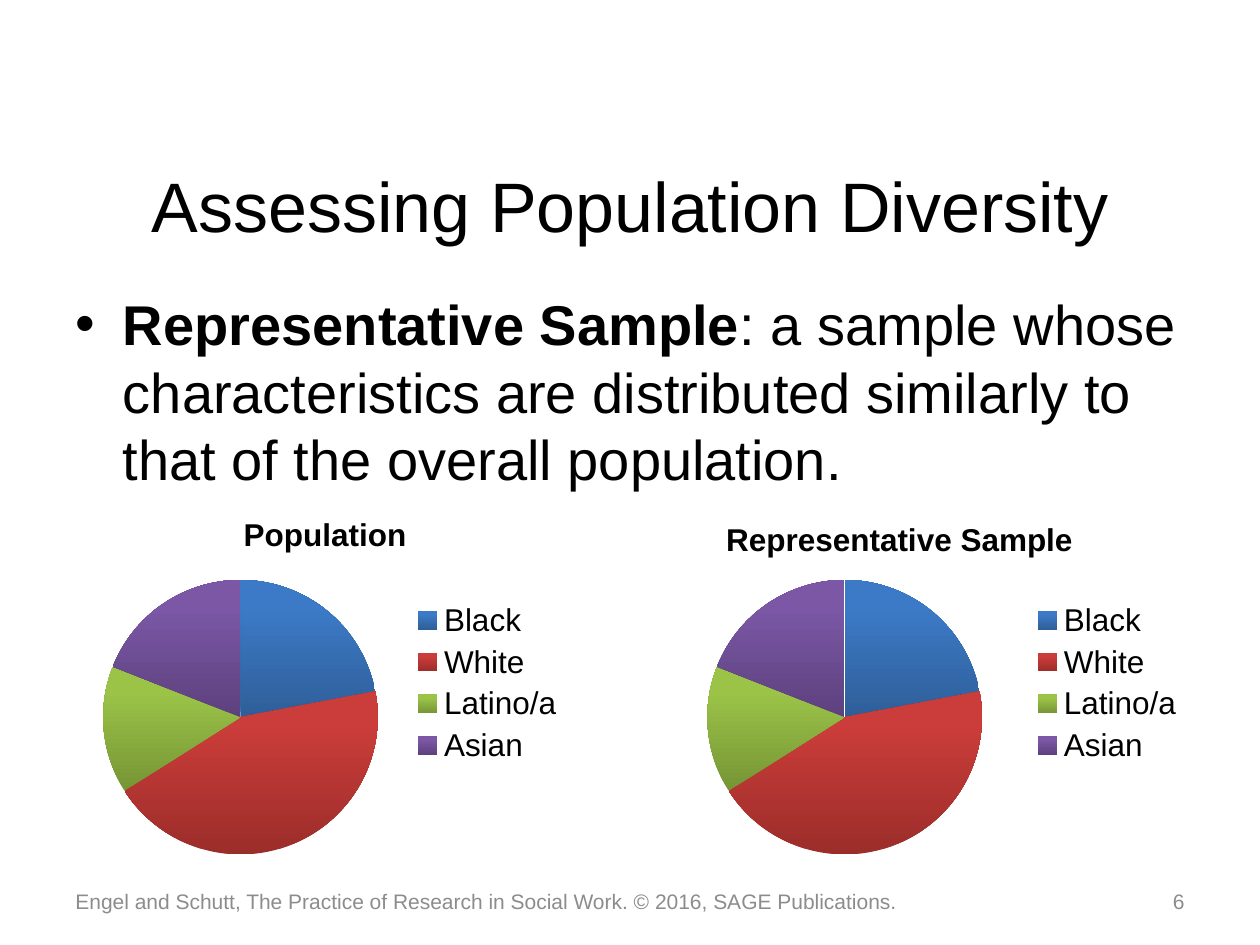
from lxml import etree
from pptx import Presentation
from pptx.chart.data import CategoryChartData
from pptx.dml.color import RGBColor
from pptx.enum import chart as ch, text as t
from pptx.util import Inches, Pt

# Content
TITLE = "Assessing Population Diversity"
TERM = "Representative Sample"
DEFINITION = ": a sample whose characteristics are distributed similarly to that of the overall population."
CREDIT = "Engel and Schutt, The Practice of Research in Social Work. © 2016, SAGE Publications."
PAGE = "6"
GROUPS = {"Black": 22, "White": 44, "Latino/a": 15, "Asian": 19}
PIES = [  # title, series name, left, width, title position as share of chart
    ("Population", "Population", 0.58, 4, None),
    ("Representative Sample", "Series 1", 5.25, 4.25, (0.11, 0.05)),
]
COLORS = {"text": "000000", "footer": "8C8C8C"}
SLICES = {  # bottom and top of each slice's gradient
    "Black": ("2E5F99", "3C7AC7"),
    "White": ("9B2D2A", "CB3D3A"),
    "Latino/a": ("769535", "9BC348"),
    "Asian": ("5D417E", "7B57A5"),
}
FONT = "Arial"


def style_font(font, size, color="text", bold=False):
    font.name, font.size, font.bold = FONT, Pt(size), bold
    font.color.rgb = RGBColor.from_string(COLORS[color])


def add_run(paragraph, words, **style):
    run = paragraph.add_run()
    run.text = words
    style_font(run.font, **style)


def place(shape, left, top, width, height):
    shape.left, shape.top = Inches(left), Inches(top)
    shape.width, shape.height = Inches(width), Inches(height)


def add_footer(slide, words, left, width, align):
    frame = slide.shapes.add_textbox(Inches(left), Inches(6.95), Inches(width), Inches(0.4)).text_frame
    frame.word_wrap = True
    frame.vertical_anchor = t.MSO_ANCHOR.MIDDLE
    frame.paragraphs[0].alignment = align
    add_run(frame.paragraphs[0], words, size=12, color="footer")


def place_chart_title(title, x, y):
    ns = "http://schemas.openxmlformats.org/drawingml/2006/chart"
    layout = etree.fromstring(
        f'<c:layout xmlns:c="{ns}"><c:manualLayout><c:xMode val="edge"/><c:yMode val="edge"/>'
        f'<c:x val="{x}"/><c:y val="{y}"/></c:manualLayout></c:layout>')
    for old in title._element.findall(f"{{{ns}}}layout"):
        title._element.remove(old)
    title._element.find(f"{{{ns}}}tx").addnext(layout)


def add_pie(slide, heading, series_name, left, width, title_at):
    data = CategoryChartData()
    data.categories = list(GROUPS)
    data.add_series(series_name, list(GROUPS.values()))
    pie = slide.shapes.add_chart(ch.XL_CHART_TYPE.PIE, Inches(left), Inches(3.92),
                                 Inches(width), Inches(3), data).chart
    style_font(pie.font, 18)
    pie.has_title = True
    add_run(pie.chart_title.text_frame.paragraphs[0], heading, size=18, bold=True)
    pie.chart_title.include_in_layout = False
    if title_at:
        place_chart_title(pie.chart_title, *title_at)
    pie.has_legend = True
    pie.legend.position = ch.XL_LEGEND_POSITION.RIGHT
    pie.legend.include_in_layout = False
    style_font(pie.legend.font, 18)
    plot = pie.plots[0]
    plot.vary_by_categories = True
    for i, group in enumerate(GROUPS):
        fill = plot.series[0].points[i].format.fill
        fill.gradient()
        fill.gradient_angle = 90
        for stop, color, position in zip(fill.gradient_stops, SLICES[group], (0, 0.8)):
            stop.color.rgb = RGBColor.from_string(color)
            stop.position = position


def main():
    prs = Presentation()
    prs.slide_width, prs.slide_height = Inches(10), Inches(7.5)
    slide = prs.slides.add_slide(prs.slide_layouts[1])

    # Title and definition
    title, body = slide.placeholders
    place(title, 0.5, 1.08, 9, 1.08)
    add_run(title.text_frame.paragraphs[0], TITLE, size=40)
    place(body, 0.5, 2.25, 9, 4.45)
    definition = body.text_frame.paragraphs[0]
    definition.space_before = Pt(0)
    add_run(definition, TERM, size=32, bold=True)
    add_run(definition, DEFINITION, size=32)

    # Footer
    add_footer(slide, CREDIT, 0.5, 8.42, t.PP_ALIGN.LEFT)
    add_footer(slide, PAGE, 9.01, 0.49, t.PP_ALIGN.RIGHT)

    # Pie charts
    for pie in PIES:
        add_pie(slide, *pie)

    prs.save("out.pptx")


if __name__ == "__main__":
    main()
